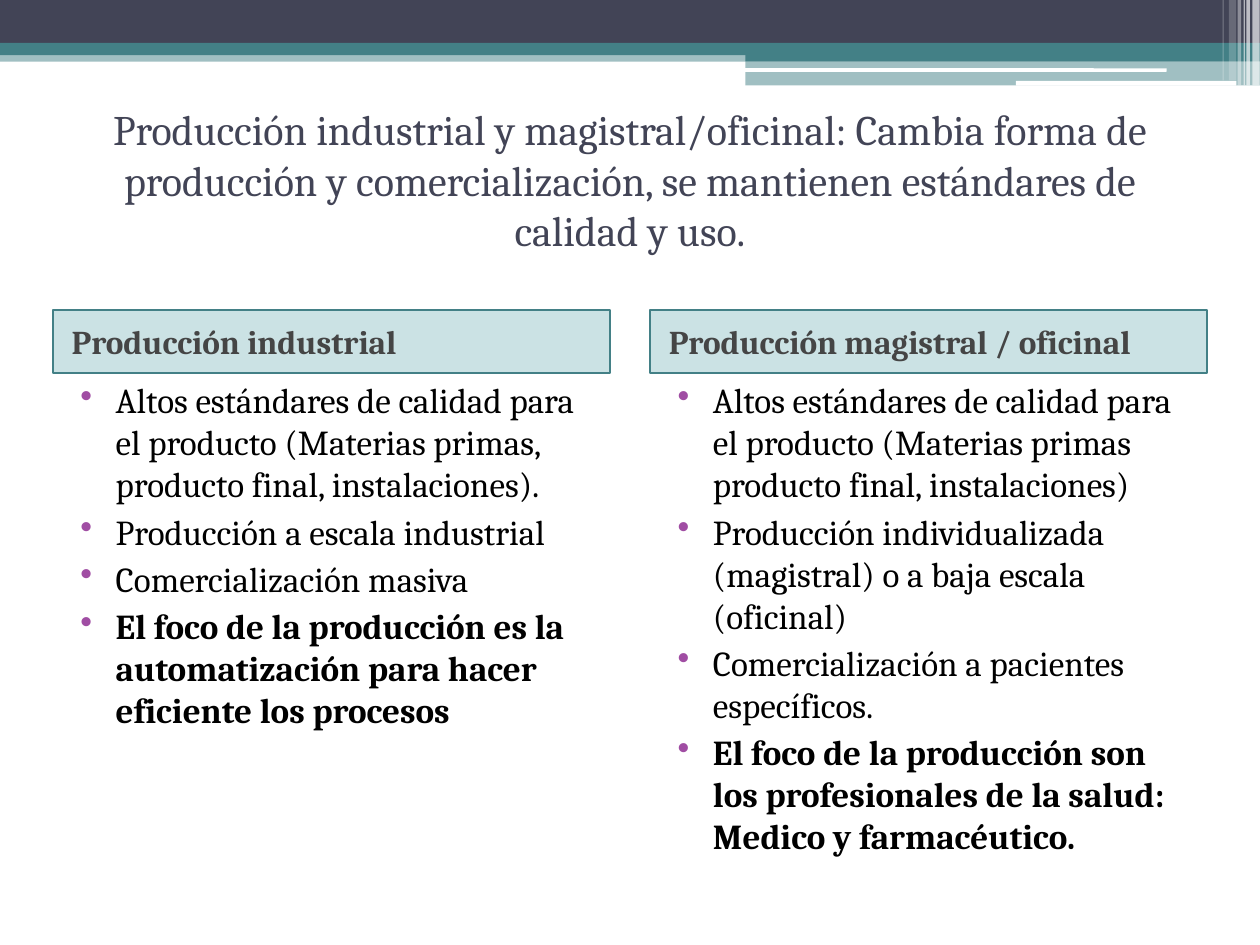
from dataclasses import dataclass
from typing import NamedTuple

from lxml.etree import SubElement as Sub
from pptx import Presentation
from pptx.dml.color import RGBColor as Rgb
from pptx.enum.shapes import MSO_SHAPE as Geo
from pptx.enum.text import MSO_ANCHOR as Anchor, PP_ALIGN as Align
from pptx.oxml.ns import qn
from pptx.util import Pt


@dataclass(frozen=True)
class Theme:
    font: str = "Cambria"
    navy: str = "424456"
    teal: str = "438086"
    aqua: str = "328E97"
    white: str = "FFFFFF"
    gray: str = "454545"
    black: str = "000000"
    plum: str = "A04DA3"
    title: float = 24
    head: float = 19
    body: float = 20


class Band(NamedTuple):
    left: float
    top: float
    width: float
    height: float
    color: str
    alpha: int = 100
    geo: Geo = Geo.RECTANGLE


class Column(NamedTuple):
    left: float
    head: str
    items: tuple[str, ...]  # the last item is bold


T = Theme()
WIDE, HIGH = 720, 540
EDGE, COL = 30.25, 318.25
ROUND = Geo.ROUNDED_RECTANGLE

BANDS = (
    # Full-width header stripes
    Band(0, 28.8, WIDE, 6.5, T.teal, 50),
    Band(0, 0, WIDE, 24.5, T.navy),
    Band(0, 24.5, WIDE, 7, T.teal),
    # Step on the right
    Band(426, 28, 294, 7, T.teal),
    Band(426, 34.8, 294, 14, T.teal, 50),
    Band(425.5, 39, 241.2, 2, T.white, 100, ROUND),
    Band(580.5, 46.2, 126, 2.7, T.white, 100, ROUND),
    # Pale upright bars in the corner
    *(Band(left, 0, width, height, T.white, alpha)
      for left, width, height, alpha in (
          (715.6, 4.2, 48.8, 65), (712.2, 2, 48.8, 65),
          (710.7, 0.7, 48.8, 60), (707.2, 2, 48.8, 40),
          (702.2, 4.2, 46, 20), (698.6, 0.7, 46, 30))),
)

COLUMNS = (
    Column(EDGE, "Producción industrial", (
        "Altos estándares de calidad para el producto "
        "(Materias primas, producto final, instalaciones).",
        "Producción a escala industrial",
        "Comercialización masiva",
        "El foco de la producción es la automatización "
        "para hacer eficiente los procesos")),
    Column(WIDE - EDGE - COL, "Producción magistral / oficinal", (
        "Altos estándares de calidad para el producto "
        "(Materias primas producto final, instalaciones)",
        "Producción individualizada (magistral) o a baja escala (oficinal)",
        "Comercialización a pacientes específicos.",
        "El foco de la producción son los profesionales de la salud: "
        "Medico y farmacéutico.")),
)


def draw_band(slide, band: Band):
    box = slide.shapes.add_shape(
        band.geo, *map(Pt, (band.left, band.top, band.width, band.height)))
    box.shadow.inherit = False
    box.line.fill.background()
    box.fill.solid()
    box.fill.fore_color.rgb = Rgb.from_string(band.color)
    if band.alpha < 100:
        clr = box.fill._xPr.find(".//" + qn("a:srgbClr"))
        Sub(clr, qn("a:alpha"), val=str(band.alpha * 1000))
    return box


def add_text(slide, left: float, top: float, width: float, height: float):
    return slide.shapes.add_textbox(*map(Pt, (left, top, width, height)))


def write(par, text: str, size: float, color: str, bold: bool = False) -> None:
    run = par.add_run()
    run.text = text
    look = {"name": T.font, "size": Pt(size), "bold": bold}
    for key, val in look.items():
        setattr(run.font, key, val)
    run.font.color.rgb = Rgb.from_string(color)


def set_frame(box, anchor: Anchor):
    frame = box.text_frame
    look = {"word_wrap": True, "vertical_anchor": anchor,
            "margin_left": Pt(7.2), "margin_right": Pt(7.2),
            "margin_top": Pt(3.6), "margin_bottom": Pt(3.6)}
    for key, val in look.items():
        setattr(frame, key, val)
    return frame


def indent(par, left: float, first: float = 0):
    par.alignment = Align.LEFT
    par.space_before = Pt(3)
    props = par._p.get_or_add_pPr()
    props.set("marL", str(Pt(left)))
    props.set("indent", str(Pt(first)))
    return props


def draw_column(slide, col: Column) -> None:
    # Heading box
    box = draw_band(slide, Band(col.left, 177, COL, 36, T.aqua, 25))
    box.line.color.rgb = Rgb.from_string(T.teal)
    box.line.width = Pt(1)
    par = set_frame(box, Anchor.MIDDLE).paragraphs[0]
    indent(par, 3.6)
    write(par, col.head, T.head, T.gray, True)

    # Bulleted list
    box = add_text(slide, col.left, 213, COL, 306)
    frame = set_frame(box, Anchor.TOP)
    for num, item in enumerate(col.items):
        par = frame.add_paragraph() if num else frame.paragraphs[0]
        props = indent(par, 28.8, -20.2)
        Sub(Sub(props, qn("a:buClr")), qn("a:srgbClr"), val=T.plum)
        Sub(props, qn("a:buChar"), char="•")
        write(par, item, T.body, T.black, num == len(col.items) - 1)


def main() -> None:
    deck = Presentation()
    deck.slide_width, deck.slide_height = Pt(WIDE), Pt(HIGH)
    slide = deck.slides.add_slide(deck.slide_layouts[6])

    # Header
    for band in BANDS:
        draw_band(slide, band)

    # Title
    box = add_text(slide, EDGE, 60.5, WIDE - 2 * EDGE, 84.2)
    par = set_frame(box, Anchor.MIDDLE).paragraphs[0]
    par.alignment = Align.CENTER
    write(par, "Producción industrial y magistral/oficinal: Cambia forma de "
          "producción y comercialización, se mantienen estándares de "
          "calidad y uso.", T.title, T.navy)

    # Comparison
    for col in COLUMNS:
        draw_column(slide, col)

    deck.save("out.pptx")


if __name__ == "__main__":
    main()
